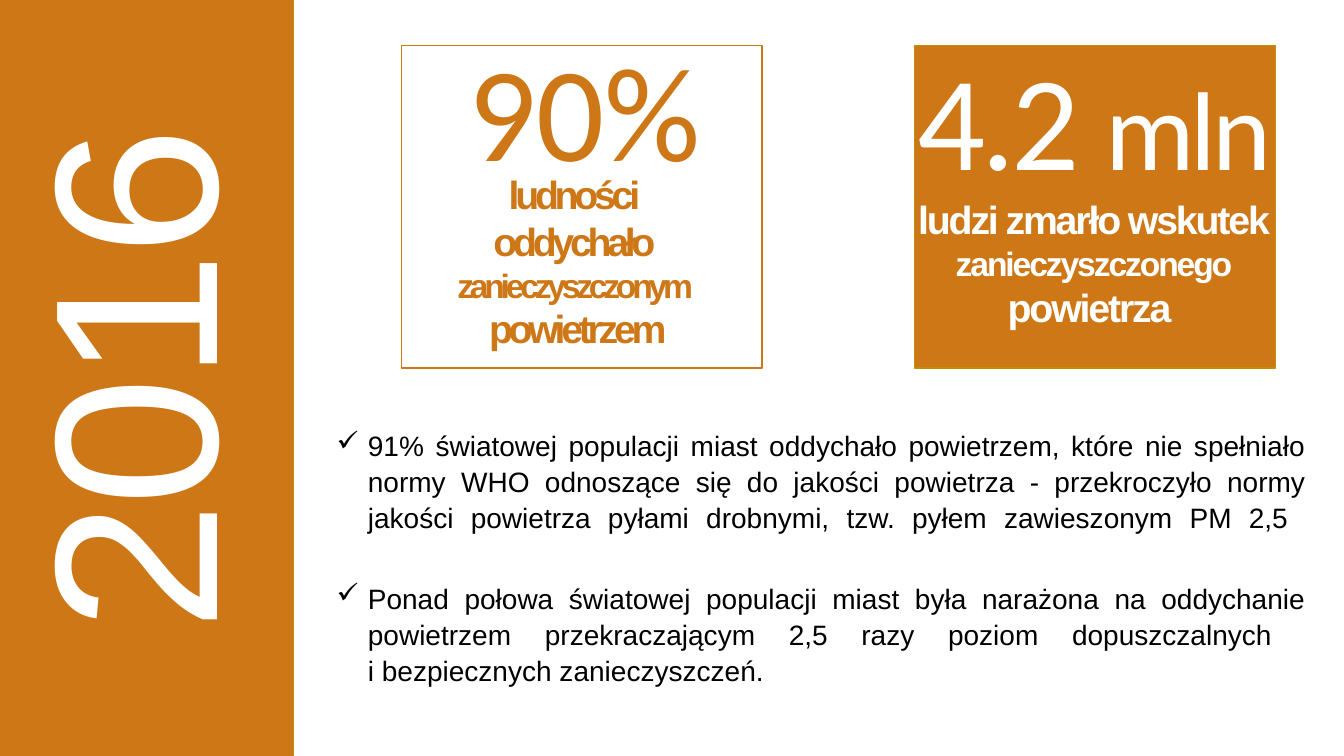
from lxml.etree import SubElement
from pptx import Presentation
from pptx.dml.color import RGBColor
from pptx.enum.shapes import MSO_SHAPE
from pptx.enum.text import MSO_ANCHOR, PP_ALIGN
from pptx.oxml.ns import qn
from pptx.util import Pt

PX = 9144
ORANGE, GOLD, WHITE, BLACK = "CD7717", "BF9000", "FFFFFF", "000000"


def px(length):
    return length * PX


def color(value):
    return RGBColor.from_string(value)


def add_rectangle(page, box, fill=None, line=None):
    shape = page.shapes.add_shape(MSO_SHAPE.RECTANGLE, *map(px, box))
    shape.shadow.inherit = False
    if fill:
        shape.fill.solid()
        shape.fill.fore_color.rgb = color(fill)
    else:
        shape.fill.background()
    if line:
        shape.line.color.rgb = color(line)
        shape.line.width = Pt(1)
    else:
        shape.line.fill.background()
    return shape


def add_textbox(page, box):
    frame = page.shapes.add_textbox(*map(px, box)).text_frame
    frame.word_wrap = True
    return frame


def style(para, align, ink, size, font="Arial", bold=False):
    para.alignment = align
    para.font.name = font
    para.font.size = Pt(size)
    para.font.bold = bold
    para.font.color.rgb = color(ink)


def add_span(para, text, size=None, spacing=0):
    span = para.add_run()
    span.text = text
    if size:
        span.font.size = Pt(size)
    if spacing:
        span._r.get_or_add_rPr().set("spc", str(round(spacing * 100)))


def add_lines(para, lines, spacing=0):
    for index, (text, size) in enumerate(lines):
        if index:
            para.add_line_break()
        if text:
            add_span(para, text, size, spacing)


def year_band(page, box, year):
    left, top, width, height = box
    add_rectangle(page, box, ORANGE, GOLD)
    label_width, label_height = 759, 289
    center_x, center_y = left + 122, top + height // 2 + 2
    label = add_rectangle(page, (center_x - label_width // 2, center_y - label_height // 2,
                                 label_width, label_height), ORANGE)
    label.rotation = 270
    frame = label.text_frame
    frame.word_wrap = True
    frame.vertical_anchor = MSO_ANCHOR.BOTTOM
    para = frame.paragraphs[0]
    style(para, PP_ALIGN.CENTER, WHITE, 166)
    add_span(para, year, spacing=-3)


def stat_card(page, box, fill, line, ink, figure, figure_box, lines, lines_box, spacing):
    left, top = box[:2]
    add_rectangle(page, box, fill, line)

    def inner(part):
        return left + part[0], top + part[1], part[2], part[3]

    para = add_textbox(page, inner(figure_box)).paragraphs[0]
    style(para, PP_ALIGN.CENTER, ink, 96, "Calibri")
    para.space_before = Pt(10)
    for text, size, figure_spacing in figure:
        add_span(para, text, size, figure_spacing)

    para = add_textbox(page, inner(lines_box)).paragraphs[0]
    style(para, PP_ALIGN.CENTER, ink, 28, bold=True)
    add_lines(para, lines, spacing)


def findings(page, box, items):
    frame = add_textbox(page, box)
    for index, lines in enumerate(items):
        para = frame.add_paragraph() if index else frame.paragraphs[0]
        style(para, PP_ALIGN.JUSTIFY, BLACK, 20)
        para.line_spacing = 1.07
        para.space_after = Pt(8)
        properties = para._p.get_or_add_pPr()
        properties.set("marL", str(px(31)))
        properties.set("indent", str(px(-31)))
        bullet = SubElement(properties, qn("a:buChar"))
        bullet.set("char", "✓")
        properties.find(qn("a:defRPr")).addprevious(bullet)
        add_lines(para, [(text, None) for text in lines])


def build():
    deck = Presentation()
    deck.slide_width, deck.slide_height = px(1333), px(750)
    page = deck.slides.add_slide(deck.slide_layouts[6])
    year_band(page, (0, -4, 291, 756), "2016")
    stat_card(page, (398, 45, 358, 320), None, ORANGE, ORANGE,
              [("90%", None, 0)], (39, -23, 285, 334),
              [("ludności ", None), ("oddychało ", None),
               ("zanieczyszczonym ", 24), ("powietrzem", None)],
              (41, 119, 268, 192), -3)
    stat_card(page, (907, 45, 358, 320), ORANGE, GOLD, WHITE,
              [("4.2 ", None, -3), ("mln", 80, -3)], (-61, -14, 479, 334),
              [("ludzi zmarło wskutek", None), ("zanieczyszczonego", 24), ("powietrza ", None)],
              (-70, 144, 496, 145), -1.5)
    findings(page, (324, 418, 981, 321), [
        ("91% światowej populacji miast oddychało powietrzem, które nie spełniało normy WHO "
         "odnoszące się do jakości powietrza - przekroczyło normy jakości powietrza pyłami "
         "drobnymi, tzw. pyłem zawieszonym PM 2,5 ", ""),
        ("Ponad połowa światowej populacji miast była narażona na oddychanie powietrzem "
         "przekraczającym 2,5 razy poziom dopuszczalnych ", "i bezpiecznych zanieczyszczeń."),
    ])
    deck.save("out.pptx")


if __name__ == "__main__":
    build()
